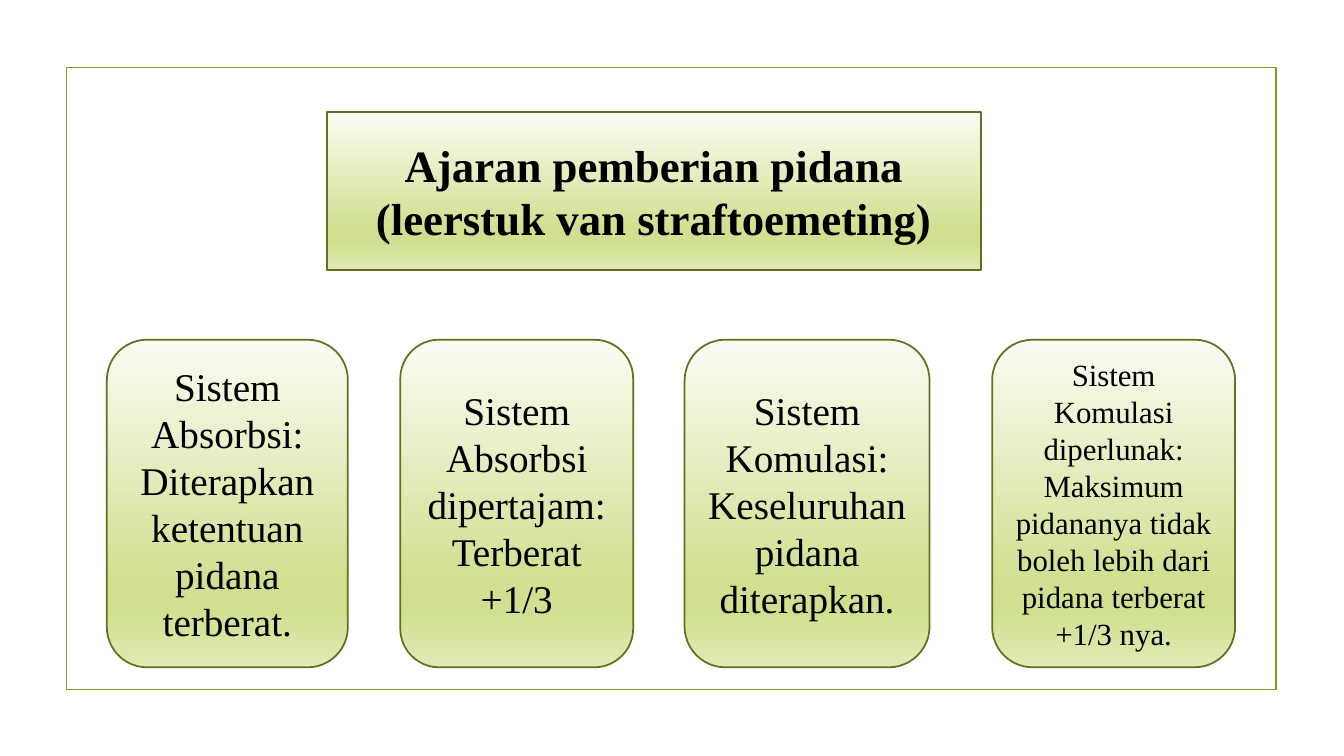
from lxml.etree import SubElement
from pptx import Presentation
from pptx.dml.color import RGBColor
from pptx.enum.shapes import MSO_SHAPE
from pptx.enum.text import MSO_ANCHOR, MSO_AUTO_SIZE, PP_ALIGN
from pptx.oxml.ns import qn
from pptx.util import Inches, Pt

BLACK = RGBColor(0x00, 0x00, 0x00)
FRAME_GREEN = RGBColor(0x83, 0x99, 0x2A)
OUTLINE_GREEN = RGBColor(0x61, 0x71, 0x1F)
PALE_GREEN = RGBColor(0xFA, 0xFC, 0xF3)
MID_GREEN = RGBColor(0xD0, 0xE0, 0x90)
SOFT_GREEN = RGBColor(0xE0, 0xEB, 0xB5)
GRADIENT_STOPS = [(0, PALE_GREEN), (74, MID_GREEN), (83, MID_GREEN), (100, SOFT_GREEN)]

FONT_NAME = "Times New Roman"
FRAME_BOX = (0.66, 0.67, 12, 6.17)
TITLE_BOX = (3.24, 1.11, 6.49, 1.57)
CARDS_TOP = 3.37
CARDS_HEIGHT = 3.25
TITLE = "Ajaran pemberian pidana (leerstuk van straftoemeting)"
CARDS = [
    (1.06, 2.39, 28, "Sistem Absorbsi: Diterapkan ketentuan pidana terberat."),
    (3.97, 2.31, 28, "Sistem Absorbsi dipertajam: Terberat +1/3"),
    (6.79, 2.43, 28, "Sistem Komulasi: Keseluruhan pidana diterapkan."),
    (9.84, 2.41, 22, "Sistem Komulasi diperlunak: Maksimum pidananya tidak "
                     "boleh lebih dari pidana terberat +1/3 nya."),
]


def set_outline(shape, color):
    shape.line.color.rgb = color
    shape.line.width = Pt(1.25)


def fill_gradient(shape):
    shape.fill.gradient()
    shape.fill.gradient_angle = 270
    stop_list = shape._element.spPr.find(qn("a:gradFill")).find(qn("a:gsLst"))
    for stop in list(stop_list):
        stop_list.remove(stop)
    for percent, color in GRADIENT_STOPS:
        stop = SubElement(stop_list, qn("a:gs"), pos=str(percent * 1000))
        SubElement(stop, qn("a:srgbClr"), val=str(color))


def format_panel(shape, text, size, bold=False):
    fill_gradient(shape)
    set_outline(shape, OUTLINE_GREEN)
    text_frame = shape.text_frame
    text_frame.text = text
    text_frame.word_wrap = True
    text_frame.auto_size = MSO_AUTO_SIZE.NONE
    text_frame.vertical_anchor = MSO_ANCHOR.MIDDLE
    paragraph = text_frame.paragraphs[0]
    paragraph.alignment = PP_ALIGN.CENTER
    font = paragraph.runs[0].font
    font.name = FONT_NAME
    font.size = Pt(size)
    font.bold = bold
    font.color.rgb = BLACK


def add_frame(slide, box):
    frame = slide.shapes.add_shape(MSO_SHAPE.RECTANGLE, *map(Inches, box))
    frame.shadow.inherit = False
    frame.fill.background()
    set_outline(frame, FRAME_GREEN)


def place_title(slide, box):
    title = slide.shapes.title
    title.left, title.top, title.width, title.height = map(Inches, box)
    geometry = SubElement(title._element.spPr, qn("a:prstGeom"), prst="roundRect")
    SubElement(geometry, qn("a:avLst"))
    format_panel(title, TITLE, 32, bold=True)


def add_card(slide, box, text, size):
    card = slide.shapes.add_shape(MSO_SHAPE.ROUNDED_RECTANGLE, *map(Inches, box))
    card.shadow.inherit = False
    format_panel(card, text, size)


def add_cards(slide, top, height):
    for left, width, size, text in CARDS:
        add_card(slide, (left, top, width, height), text, size)


def main():
    presentation = Presentation()
    presentation.slide_width = Inches(13.33)
    presentation.slide_height = Inches(7.5)
    slide = presentation.slides.add_slide(presentation.slide_layouts[5])
    add_frame(slide, FRAME_BOX)
    place_title(slide, TITLE_BOX)
    add_cards(slide, CARDS_TOP, CARDS_HEIGHT)
    presentation.save("out.pptx")


if __name__ == "__main__":
    main()
